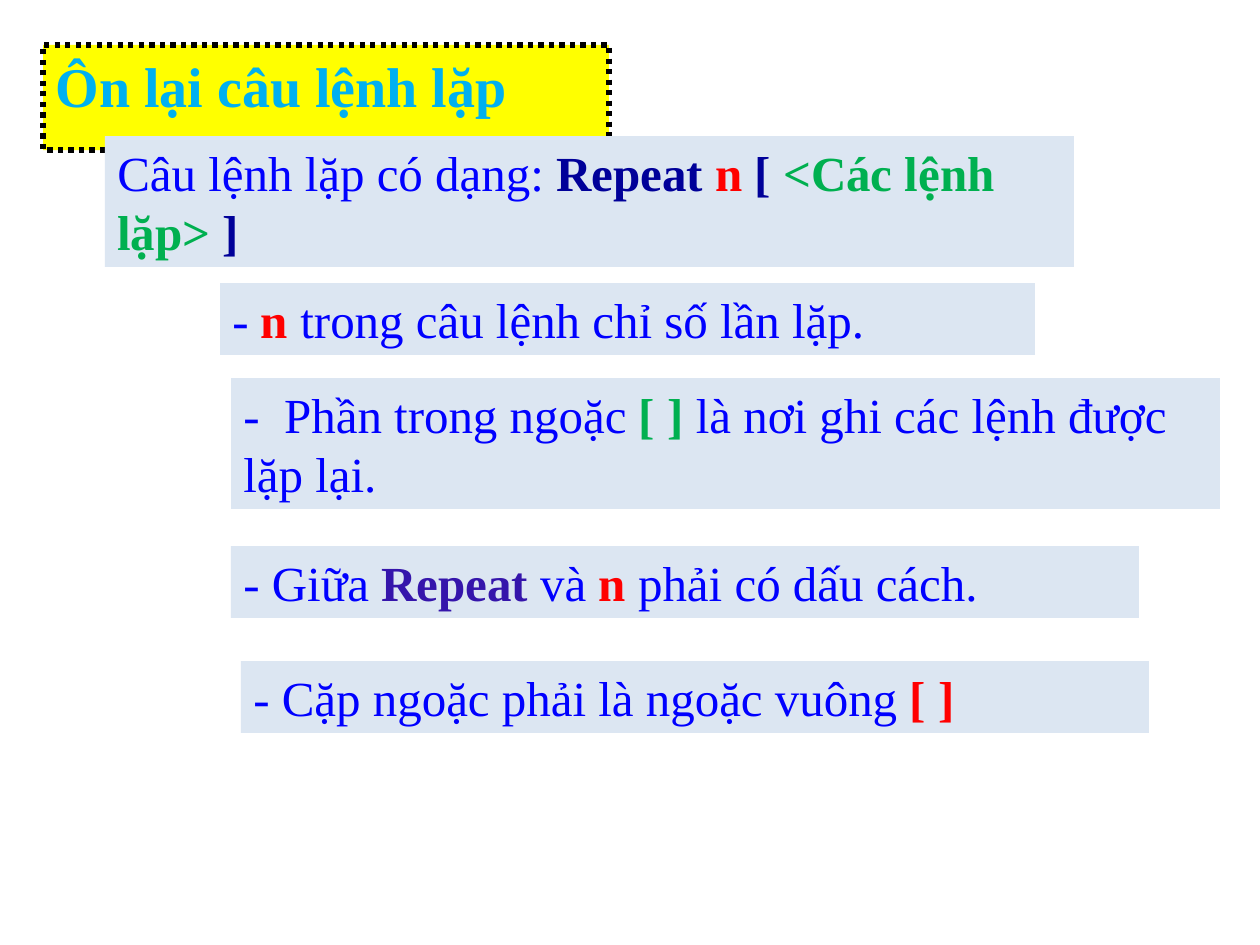
from pptx import Presentation
from pptx.dml.color import RGBColor
from pptx.enum.dml import MSO_LINE
from pptx.enum.shapes import MSO_SHAPE
from pptx.enum.text import MSO_ANCHOR, MSO_AUTO_SIZE, PP_ALIGN
from pptx.util import Pt

RECT = MSO_SHAPE.RECTANGLE
DOTTED = MSO_LINE.ROUND_DOT  # written as sysDot
TOP, MIDDLE = MSO_ANCHOR.TOP, MSO_ANCHOR.MIDDLE
GROW = MSO_AUTO_SIZE.SHAPE_TO_FIT_TEXT
LEFT = PP_ALIGN.LEFT

FONT = "Times New Roman"
COLORS = {
    "panel": "DCE6F2", "title_fill": "FFFF00", "title_line": "000000",
    "title": "00B0F0", "blue": "0000FF", "navy": "000099",
    "red": "FF0000", "green": "00B050", "violet": "3515AB",
}
ONE_LINE, TWO_LINES = 72, 131  # panel heights in px

# Each panel: box (left, top, width, height), then runs (text, colour);
# plain text is blue, every other colour marks bold keywords.
PANELS = [
    ((105, 136, 969, TWO_LINES),
     [("Câu lệnh lặp có dạng: ", "blue"), ("Repeat ", "navy"), ("n ", "red"),
      ("[ ", "navy"), ("<Các lệnh lặp> ", "green"), ("]", "navy")]),
    ((220, 283, 815, ONE_LINE),
     [("- ", "blue"), ("n", "red"),
      (" trong câu lệnh chỉ số lần lặp.", "blue")]),
    ((231, 378, 989, TWO_LINES),
     [("-  Phần trong ngoặc ", "blue"), ("[ ] ", "green"),
      ("là nơi ghi các lệnh được lặp lại.", "blue")]),
    ((231, 546, 908, ONE_LINE),
     [("- Giữa ", "blue"), ("Repeat", "violet"), (" và ", "blue"),
      ("n", "red"), (" phải có dấu cách.", "blue")]),
    ((241, 661, 908, ONE_LINE),
     [("- Cặp ngoặc phải là ngoặc vuông ", "blue"), ("[ ]", "red")]),
]


def px(n):
    return round(n * 914400 / 126)


def color(name):
    return RGBColor.from_string(COLORS[name])


def fill(sp, name):
    sp.fill.solid()
    sp.fill.fore_color.rgb = color(name)


def write(sp, runs, size, anchor):
    tf = sp.text_frame
    tf.word_wrap = True
    tf.auto_size = GROW
    tf.vertical_anchor = anchor
    p = tf.paragraphs[0]
    p.alignment = LEFT
    for text, name in runs:
        r = p.add_run()
        r.text = text
        r.font.name = FONT
        r.font.size = Pt(size)
        r.font.bold = name != "blue"
        r.font.color.rgb = color(name)


def add_title(s, box):
    sp = s.shapes.title
    sp.left, sp.top, sp.width, sp.height = map(px, box)
    fill(sp, "title_fill")
    sp.line.color.rgb = color("title_line")
    sp.line.width = Pt(3)
    sp.line.dash_style = DOTTED
    write(sp, [("Ôn lại câu lệnh lặp", "title")], 32, TOP)


def add_panel(s, box, runs):
    sp = s.shapes.add_shape(RECT, *map(px, box))
    sp.shadow.inherit = False
    fill(sp, "panel")
    sp.line.fill.background()
    write(sp, runs, 28, MIDDLE)


def main():
    prs = Presentation()
    prs.slide_width, prs.slide_height = px(1260), px(945)
    s = prs.slides.add_slide(prs.slide_layouts[5])  # Title Only

    # Heading with dotted border
    add_title(s, (43, 45, 566, 81))

    # Syntax panel and its notes
    for box, runs in PANELS:
        add_panel(s, box, runs)

    prs.save("out.pptx")


if __name__ == "__main__":
    main()
